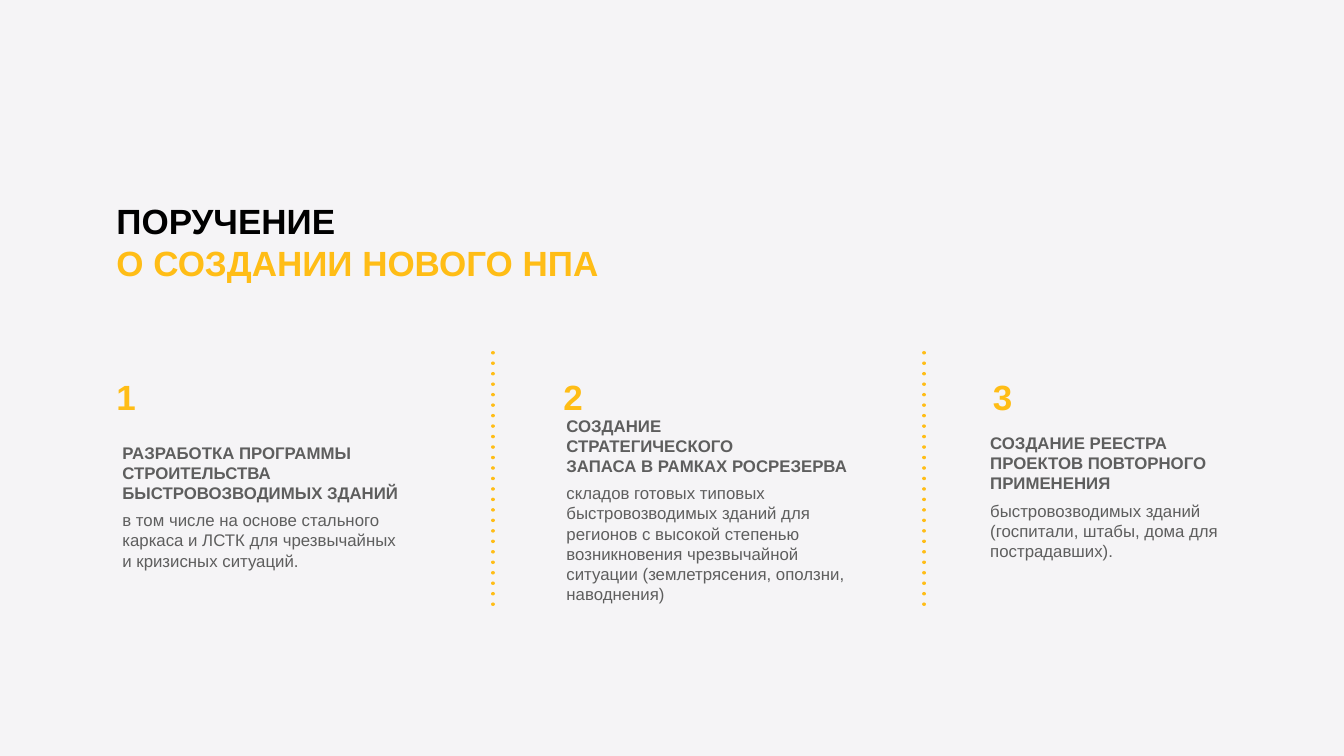
from lxml import etree
from pptx import Presentation
from pptx import util as u
from pptx.dml.color import RGBColor
from pptx.enum import shapes, text
from pptx.oxml import ns

BACKGROUND = RGBColor(0xF5, 0xF4, 0xF6)
BLACK = RGBColor(0, 0, 0)
YELLOW = RGBColor(0xFF, 0xBD, 0x16)
GREY = RGBColor(0x5E, 0x5E, 0x5E)


def add_text(slide, box, paragraphs, size, color, gap=0):
    """Add a text box; the first paragraph is bold, later ones are regular."""
    shape = slide.shapes.add_textbox(*(u.Cm(value) for value in box))
    frame = shape.text_frame
    frame.word_wrap = True
    frame.auto_size = text.MSO_AUTO_SIZE.SHAPE_TO_FIT_TEXT
    frame.vertical_anchor = text.MSO_ANCHOR.MIDDLE
    frame.margin_left = frame.margin_right = u.Cm(0.15)
    frame.margin_top = frame.margin_bottom = u.Cm(0.15)
    for index, content in enumerate(paragraphs):
        paragraph = frame.add_paragraph() if index else frame.paragraphs[0]
        paragraph.text = content
        if index:
            paragraph.space_before = u.Pt(gap)
        for run in paragraph.runs:
            run.font.name = "Arial"
            run.font.size = u.Pt(size)
            run.font.bold = index == 0
            run.font.color.rgb = color
    return shape


presentation = Presentation()
presentation.slide_width = u.Cm(67.74)
presentation.slide_height = u.Cm(38.1)
slide = presentation.slides.add_slide(presentation.slide_layouts[6])
slide.background.fill.solid()
slide.background.fill.fore_color.rgb = BACKGROUND

# Title: black first line, yellow second line
title = add_text(slide, (5.72, 9.91, 27.53, 4.57),
                 ["ПОРУЧЕНИЕ\vО СОЗДАНИИ НОВОГО НПА"], size=50, color=BLACK)
title.text_frame.paragraphs[0].runs[1].font.color.rgb = YELLOW

# Numbered columns: left edge of the number, box of the body, heading, details
columns = [
    (5.72, (6.02, 22.12, 15.52, 6.81),
     "РАЗРАБОТКА ПРОГРАММЫ СТРОИТЕЛЬСТВА БЫСТРОВОЗВОДИМЫХ ЗДАНИЙ",
     "в том числе на основе стального каркаса и ЛСТК для чрезвычайных\v"
     "и кризисных ситуаций."),
    (28.24, (28.4, 20.75, 15.01, 9.88),
     "СОЗДАНИЕ\vСТРАТЕГИЧЕСКОГО\vЗАПАСА В РАМКАХ РОСРЕЗЕРВА",
     "складов готовых типовых быстровозводимых зданий для регионов с высокой "
     "степенью возникновения чрезвычайной ситуации (землетрясения, оползни, "
     "наводнения)"),
    (49.89, (49.76, 21.77, 13.16, 6.53),
     "СОЗДАНИЕ РЕЕСТРА ПРОЕКТОВ ПОВТОРНОГО ПРИМЕНЕНИЯ",
     "быстровозводимых зданий (госпитали, штабы, дома для пострадавших)."),
]
for number, (left, body_box, heading, details) in enumerate(columns, start=1):
    add_text(slide, (left, 18.85, 5, 2.26), [str(number)], size=50, color=YELLOW)
    add_text(slide, body_box, [heading, details], size=24, color=GREY, gap=10)

# Dotted dividers between the columns
for x in (24.84, 46.58):
    divider = slide.shapes.add_connector(
        shapes.MSO_CONNECTOR.STRAIGHT, u.Cm(x), u.Cm(30.45), u.Cm(x), u.Cm(17.58))
    divider.line.color.rgb = YELLOW
    divider.line.width = u.Pt(5)
    line = divider.line._get_or_add_ln()
    line.set("cap", "rnd")
    dashes = etree.SubElement(line, ns.qn("a:custDash"))
    etree.SubElement(dashes, ns.qn("a:ds"), d="100000", sp="200000")
    etree.SubElement(divider._element.spPr, ns.qn("a:effectLst"))

presentation.save("out.pptx")
